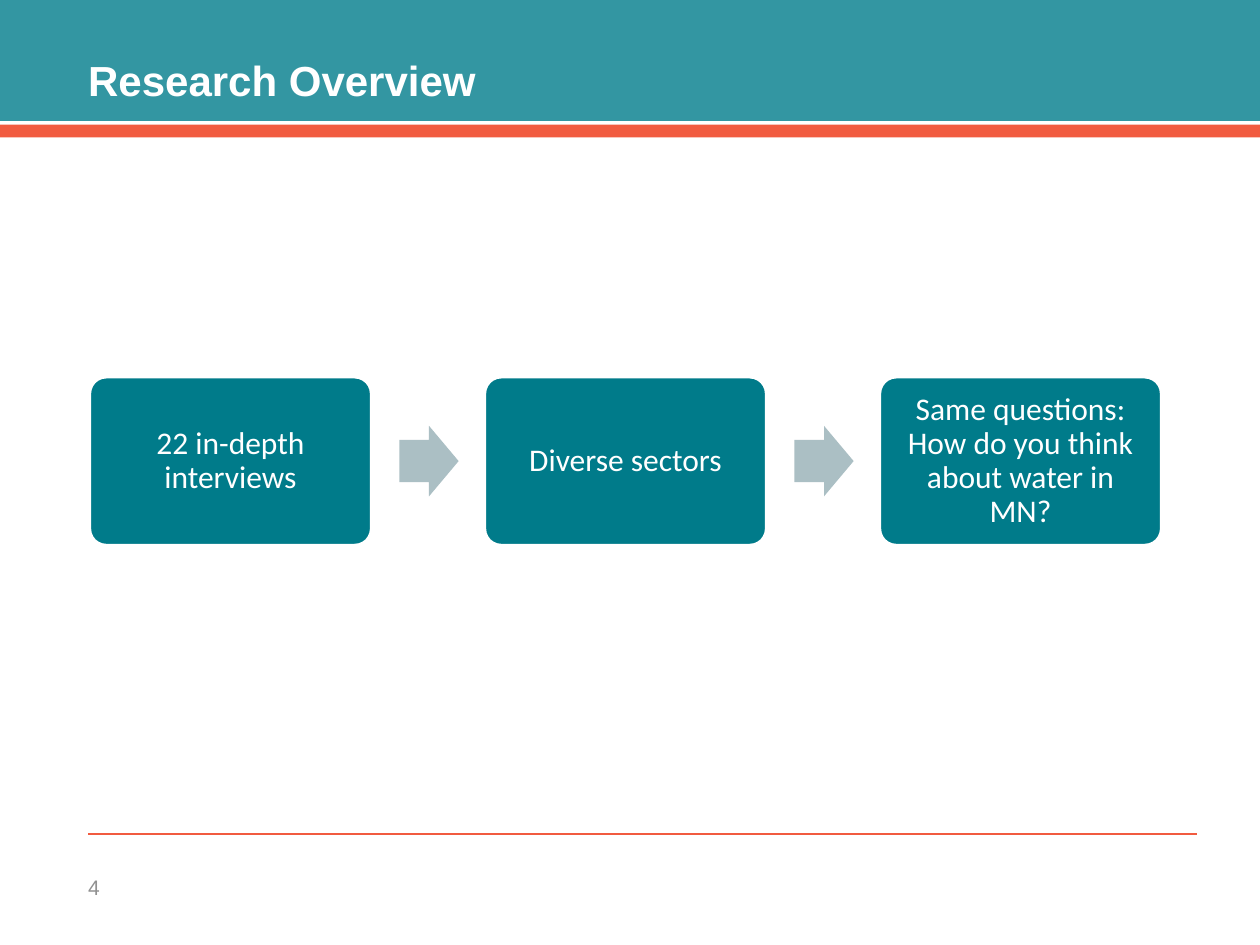
from lxml.etree import SubElement
from pptx import Presentation
from pptx.dml.color import RGBColor
from pptx.enum.shapes import MSO_CONNECTOR as Connector, MSO_SHAPE as Shape
from pptx.enum.text import MSO_ANCHOR as Anchor, PP_ALIGN as Align
from pptx.oxml.ns import qn
from pptx.util import Inches, Pt

# Content
TITLE = "Research Overview"
PAGE_NUMBER = "4"
STEPS = [
    "22 in-depth interviews",
    "Diverse sectors",
    "Same questions: How do you think about water in MN?",
]

# Colours
BAND, CORAL, STEP, ARROW = "007C8B", "F15B40", "007B8A", "ABBFC4"
WHITE, GREY = "FFFFFF", "919191"

# Layout in inches
SLIDE_W, SLIDE_H = 10, 7.5
MARGIN, CONTENT_W = 0.7, 8.8
STEP_LEFT, STEP_W, STEP_H, STEP_PITCH = 0.71, 2.24, 1.34, 3.135
ARROW_OFFSET, ARROW_W, ARROW_H = 2.46, 0.47, 0.56
FLOW_MIDDLE = 3.66

deck = Presentation()
deck.slide_width, deck.slide_height = Inches(SLIDE_W), Inches(SLIDE_H)
slide = deck.slides.add_slide(deck.slide_layouts[6])


def rgb(value):
    return RGBColor.from_string(value)


def add_block(kind, left, top, width, height, color, adjustments=()):
    block = slide.shapes.add_shape(
        kind, Inches(left), Inches(top), Inches(width), Inches(height))
    block.shadow.inherit = False
    block.fill.solid()
    block.fill.fore_color.rgb = rgb(color)
    block.line.fill.background()
    for index, value in enumerate(adjustments):
        block.adjustments[index] = value
    return block


def write(holder, text, size, font, color, inset=0, anchor=Anchor.MIDDLE,
          align=Align.LEFT, bold=False):
    frame = holder.text_frame
    frame.word_wrap = True
    frame.vertical_anchor = anchor
    frame.margin_left = frame.margin_right = Inches(inset)
    frame.margin_top = frame.margin_bottom = Inches(inset)
    paragraph = frame.paragraphs[0]
    paragraph.alignment = align
    run = paragraph.add_run()
    run.text = text
    run.font.size, run.font.name, run.font.bold = Pt(size), font, bold
    run.font.color.rgb = rgb(color)
    return paragraph


def add_label(left, top, width, height):
    return slide.shapes.add_textbox(
        Inches(left), Inches(top), Inches(width), Inches(height))


# Header band, 80% opaque, with a stripe below
band = add_block(Shape.RECTANGLE, 0, 0, SLIDE_W, 0.96, BAND)
band_color = band.fill._xPr.find(".//" + qn("a:srgbClr"))
SubElement(band_color, qn("a:alpha"), val="80000")
add_block(Shape.RECTANGLE, 0, 0.99, SLIDE_W, 0.1, CORAL)

# Footer rule
rule = slide.shapes.add_connector(
    Connector.STRAIGHT, Inches(MARGIN), Inches(6.62),
    Inches(MARGIN + CONTENT_W), Inches(6.62))
rule.line.color.rgb = rgb(CORAL)
rule.line.width = Pt(1)
SubElement(rule._element.spPr, qn("a:effectLst"))

# Title and page number
write(add_label(MARGIN, 0.43, CONTENT_W, 0.48), TITLE, 24, "Arial", WHITE,
      anchor=Anchor.TOP, bold=True)
write(add_label(MARGIN, 6.84, 0.5, 0.4), PAGE_NUMBER, 12, "Arial", GREY)

# Steps, with an arrow between neighbours
for number, text in enumerate(STEPS):
    left = STEP_LEFT + number * STEP_PITCH
    step = add_block(Shape.ROUNDED_RECTANGLE, left, FLOW_MIDDLE - STEP_H / 2,
                     STEP_W, STEP_H, STEP, [0.1])
    step.line.color.rgb = rgb(WHITE)
    step.line.width = Pt(2)
    caption = write(step, text, 18, "Calibri", WHITE, inset=0.07,
                    align=Align.CENTER)
    caption.line_spacing = 0.9
    if number < len(STEPS) - 1:
        add_block(Shape.RIGHT_ARROW, left + ARROW_OFFSET,
                  FLOW_MIDDLE - ARROW_H / 2, ARROW_W, ARROW_H, ARROW,
                  [0.6, 0.5])

deck.save("out.pptx")
